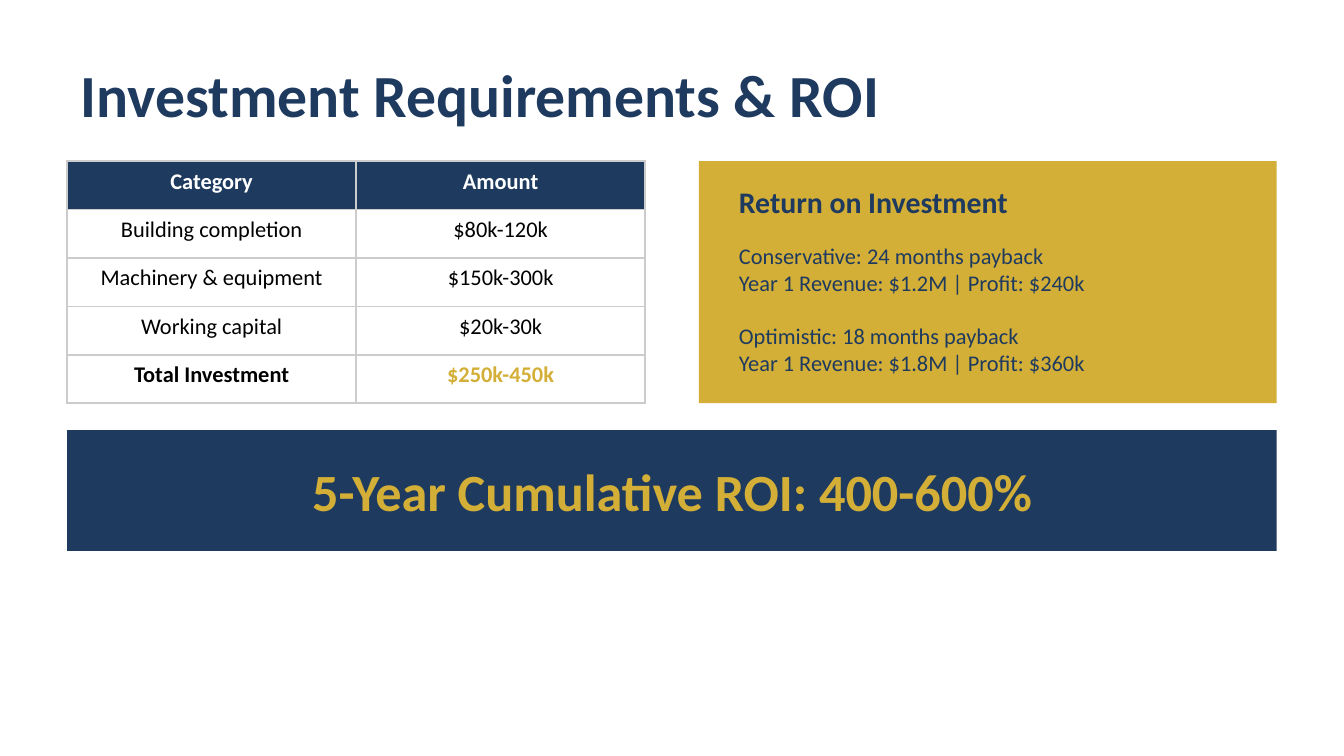
from lxml import etree
from pptx import Presentation
from pptx.dml.color import RGBColor
from pptx.enum.shapes import MSO_SHAPE
from pptx.enum.text import MSO_ANCHOR, PP_ALIGN
from pptx.oxml.ns import qn
from pptx.util import Inches, Pt

RECT = MSO_SHAPE.RECTANGLE
MID = MSO_ANCHOR.MIDDLE
LEFT, MIDDLE = PP_ALIGN.LEFT, PP_ALIGN.CENTER
HUES = {
    "navy": "1E3A5F",
    "gold": "D4AF37",
    "white": "FFFFFF",
    "black": "000000",
    "grey": "CCCCCC",
}

deck = Presentation()
deck.slide_width = Inches(10)
deck.slide_height = deck.slide_width * 9 // 16
slide = deck.slides.add_slide(deck.slide_layouts[6])
unit = deck.slide_width // 100


def grid(*spans):
    return [round(span * unit) for span in spans]


def write(frame, text, size=12, hue="navy", bold=False, align=LEFT, gap=0):
    frame.word_wrap = True
    for i, line in enumerate(text.split("\n")):
        para = frame.paragraphs[0] if i == 0 else frame.add_paragraph()
        para.alignment = align
        if gap and i and i % 2 == 0:
            para.space_before = Pt(gap)
        run = para.add_run()
        run.text = line
        font = run.font
        font.name, font.size, font.bold = "Calibri", Pt(size), bold
        font.color.rgb = RGBColor.from_string(HUES[hue])


costs = [
    ("Category", "Amount"),
    ("Building completion", "$80k-120k"),
    ("Machinery & equipment", "$150k-300k"),
    ("Working capital", "$20k-30k"),
    ("Total Investment", "$250k-450k"),
]
last = len(costs) - 1
table = slide.shapes.add_table(len(costs), 2, *grid(5, 12, 43, 18)).table
table.first_row = table.horz_banding = False
for r, row in enumerate(costs):
    for c, text in enumerate(row):
        cell = table.cell(r, c)
        head, total = r == 0, r == last
        cell.fill.solid()
        cell.fill.fore_color.rgb = RGBColor.from_string(HUES["navy" if head else "white"])
        hue = "white" if head else "gold" if total and c else "black"
        write(cell.text_frame, text, hue=hue, bold=head or total, align=MIDDLE)
        props = cell._tc.get_or_add_tcPr()
        for i, side in enumerate(("lnL", "lnR", "lnT", "lnB")):
            edge = etree.Element(qn("a:" + side), w=str(Pt(1)))
            fill = etree.SubElement(edge, qn("a:solidFill"))
            etree.SubElement(fill, qn("a:srgbClr"), val=HUES["grey"])
            props.insert(i, edge)

for spot, hue in [((52, 12, 43, 18), "gold"), ((5, 32, 90, 9), "navy")]:
    panel = slide.shapes.add_shape(RECT, *grid(*spot))
    panel.shadow.inherit = False
    panel.fill.solid()
    panel.fill.fore_color.rgb = RGBColor.from_string(HUES[hue])
    panel.line.fill.background()

returns = """Conservative: 24 months payback
Year 1 Revenue: $1.2M | Profit: $240k
Optimistic: 18 months payback
Year 1 Revenue: $1.8M | Profit: $360k"""
labels = [
    ((5, 4, 90, 6), "Investment Requirements & ROI", dict(size=32, bold=True)),
    ((54, 13.5, 39, 3), "Return on Investment", dict(size=16, bold=True)),
    ((54, 17, 39, 12), returns, dict(gap=14)),
    ((5, 34, 90, 5), "5-Year Cumulative ROI: 400-600%",
     dict(size=28, hue="gold", bold=True, align=MIDDLE)),
]
for spot, text, style in labels:
    frame = slide.shapes.add_textbox(*grid(*spot)).text_frame
    frame.vertical_anchor = MID
    write(frame, text, **style)

deck.save("out.pptx")
